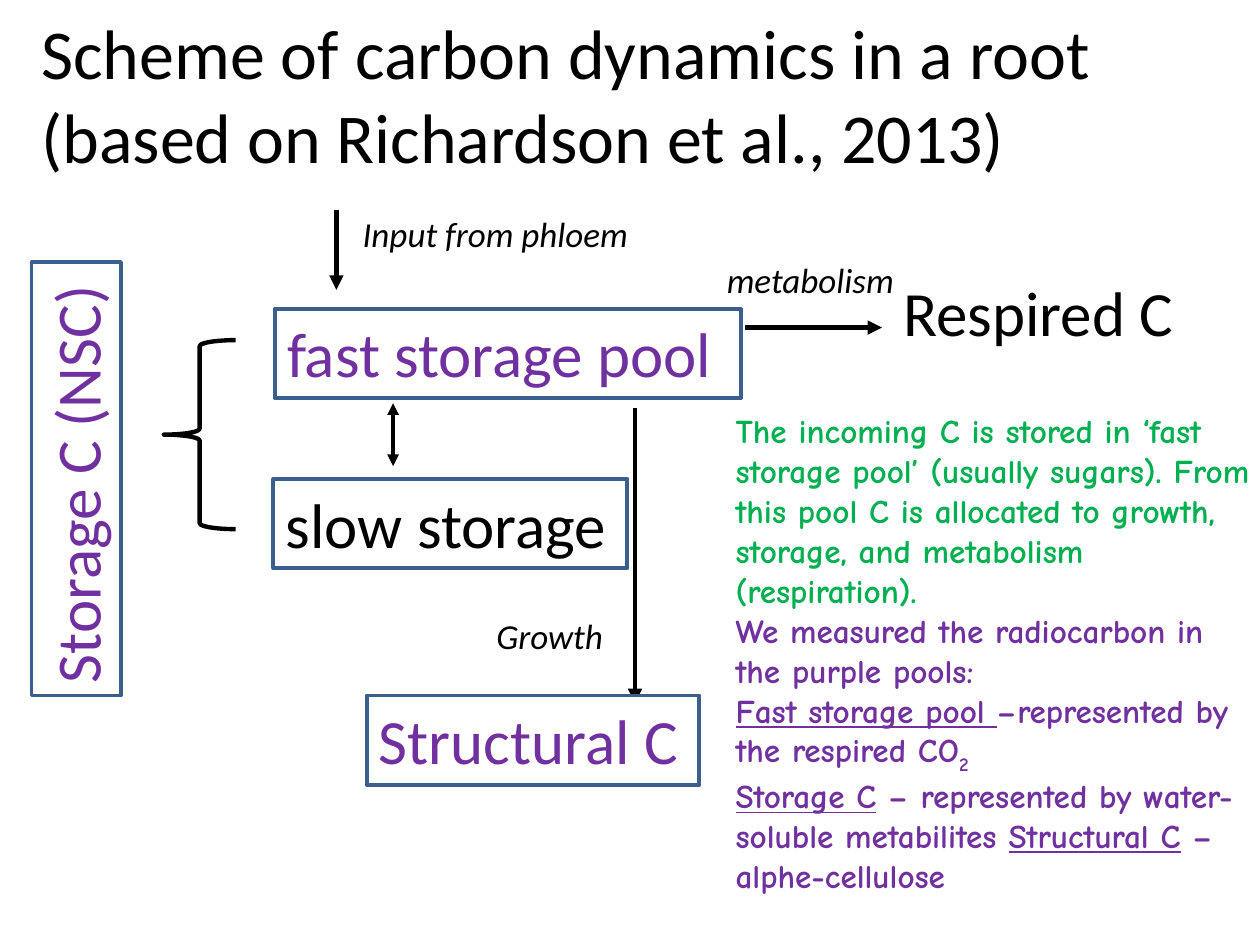
from pptx import Presentation
from pptx.dml.color import RGBColor
from pptx.enum.shapes import MSO_CONNECTOR as CONN, MSO_SHAPE as SHAPE
from pptx.enum.text import MSO_ANCHOR as ANCHOR, MSO_AUTO_SIZE as AUTO, PP_ALIGN as ALIGN
from pptx.oxml.ns import qn
from pptx.util import Inches, Pt
from lxml import etree

BLACK, WHITE, PURPLE, GREEN, BLUE = "000000", "FFFFFF", "7030A0", "00B050", "3A5F8C"
TITLE = dict(name="Calibri", size=Pt(40))
POOL = dict(name="Calibri", size=Pt(36))
LABEL = dict(name="Calibri", size=Pt(20), italic=True)
NOTE = dict(name="Comic Neue", size=Pt(19), bold=True)


def rgb(hex_color):
    return RGBColor.from_string(hex_color)


def add_run(p, text, fmt, color=BLACK, baseline=None):
    r = p.add_run()
    r.text = text
    for key, value in fmt.items():
        setattr(r.font, key, value)
    r.font.color.rgb = rgb(color)
    if baseline:
        r._r.get_or_add_rPr().set("baseline", str(baseline))


def set_frame(sp):
    tf = sp.text_frame
    frame = dict(word_wrap=True, auto_size=AUTO.SHAPE_TO_FIT_TEXT, vertical_anchor=ANCHOR.TOP)
    for key, value in frame.items():
        setattr(tf, key, value)
    return tf


def add_text(s, box, text, fmt):
    tf = set_frame(s.shapes.add_textbox(*map(Inches, box)))
    add_run(tf.paragraphs[0], text, fmt)


def add_pool(s, box, text, color, rotation=0):
    sp = s.shapes.add_shape(SHAPE.RECTANGLE, *map(Inches, box))
    sp.shadow.inherit = False
    sp.rotation = rotation
    sp.fill.solid()
    sp.fill.fore_color.rgb = rgb(WHITE)
    sp.line.color.rgb = rgb(BLUE)
    sp.line.width = Pt(2.25)
    p = set_frame(sp).paragraphs[0]
    p.alignment = ALIGN.LEFT
    add_run(p, text, POOL, color)


def add_arrow(s, x1, y1, x2, y2, width=2.75, ends=("tailEnd",)):
    c = s.shapes.add_connector(CONN.STRAIGHT, *map(Inches, (x1, y1, x2, y2)))
    c.line.color.rgb = rgb(BLACK)
    c.line.width = Pt(width)
    ln = c.line._get_or_add_ln()
    for end in ends:
        etree.SubElement(ln, qn("a:" + end), type="triangle")
    etree.SubElement(c._element.spPr, qn("a:effectLst"))


def add_storage_group(s, left, top):
    """Rotated storage box and the brace that spans both pools."""
    width, height = 3.44, 0.71
    # The box turns about its centre, so place it by that centre
    cx, cy = left + height / 2, top + width / 2
    add_pool(s, (cx - width / 2, cy - height / 2, width, height), "Storage C (NSC)", PURPLE, 270)
    brace = s.shapes.add_shape(SHAPE.LEFT_BRACE, *map(Inches, (left + 1.05, top + 0.62, 0.57, 1.5)))
    brace.shadow.inherit = False
    brace.fill.background()
    brace.line.color.rgb = rgb(BLACK)
    brace.line.width = Pt(2.5)


def add_flow(s, left, top):
    """Carbon fluxes, then the pools on top of them."""
    for x1, y1, x2, y2 in [
        (0.5, 0, 0.5, 0.63),        # phloem input
        (2.87, 1.57, 2.87, 3.91),   # growth
        (3.74, 0.93, 4.83, 0.93),   # metabolism
    ]:
        add_arrow(s, left + x1, top + y1, left + x2, top + y2)
    # Exchange between the fast and slow pools
    add_arrow(s, left + 0.95, top + 1.53, left + 0.95, top + 2.03, 2.25, ("headEnd", "tailEnd"))

    for x, y, w, text, color in [
        (0.01, 0.78, 3.7, "fast storage pool", PURPLE),
        (0, 2.13, 2.81, "slow storage", BLACK),
        (0.74, 3.85, 2.64, "Structural C", PURPLE),
    ]:
        add_pool(s, (left + x, top + y, w, 0.71), text, color)

    for x, y, w, h, text, fmt in [
        (0.61, -0.03, 2.39, 0.44, "Input from phloem", LABEL),
        (3.5, 0.33, 1.83, 0.44, "metabolism", LABEL),
        (1.67, 3.16, 1.29, 0.44, "Growth", LABEL),
        (4.9, 0.45, 3, 0.71, "Respired C", POOL),
    ]:
        add_text(s, (left + x, top + y, w, h), text, fmt)


def add_notes_column(s, box):
    """Explanation: each paragraph is a colour and its runs."""
    under = dict(NOTE, underline=True)
    paragraphs = [
        (GREEN, [("The incoming C is stored in ‘fast storage pool’ (usually sugars). From this pool C "
                  "is allocated to growth, storage, and metabolism (respiration).", NOTE)]),
        (PURPLE, [("We measured the radiocarbon in the purple pools:", NOTE)]),
        (PURPLE, [("Fast storage pool ", under), ("–represented by the respired CO", NOTE),
                  ("2", NOTE, -25000)]),
        (PURPLE, [("Storage C", under), (" – represented by water-soluble metabilites ", NOTE),
                  ("Structural C", under), (" – alphe-cellulose", NOTE)]),
    ]
    tf = set_frame(s.shapes.add_textbox(*map(Inches, box)))
    for i, (color, runs) in enumerate(paragraphs):
        p = tf.add_paragraph() if i else tf.paragraphs[0]
        for text, fmt, *baseline in runs:
            add_run(p, text, fmt, color, *baseline)


def main():
    prs = Presentation()
    prs.slide_width, prs.slide_height = Inches(10), Inches(7.5)
    s = prs.slides.add_slide(prs.slide_layouts[6])
    add_text(s, (0.23, 0.03, 9.83, 1.45),
             "Scheme of carbon dynamics in a root (based on Richardson et al., 2013)", TITLE)
    add_storage_group(s, 0.25, 2.08)
    add_flow(s, 2.17, 1.67)
    add_notes_column(s, (5.74, 3.21, 4.33, 3.94))
    prs.save("out.pptx")


if __name__ == "__main__":
    main()
